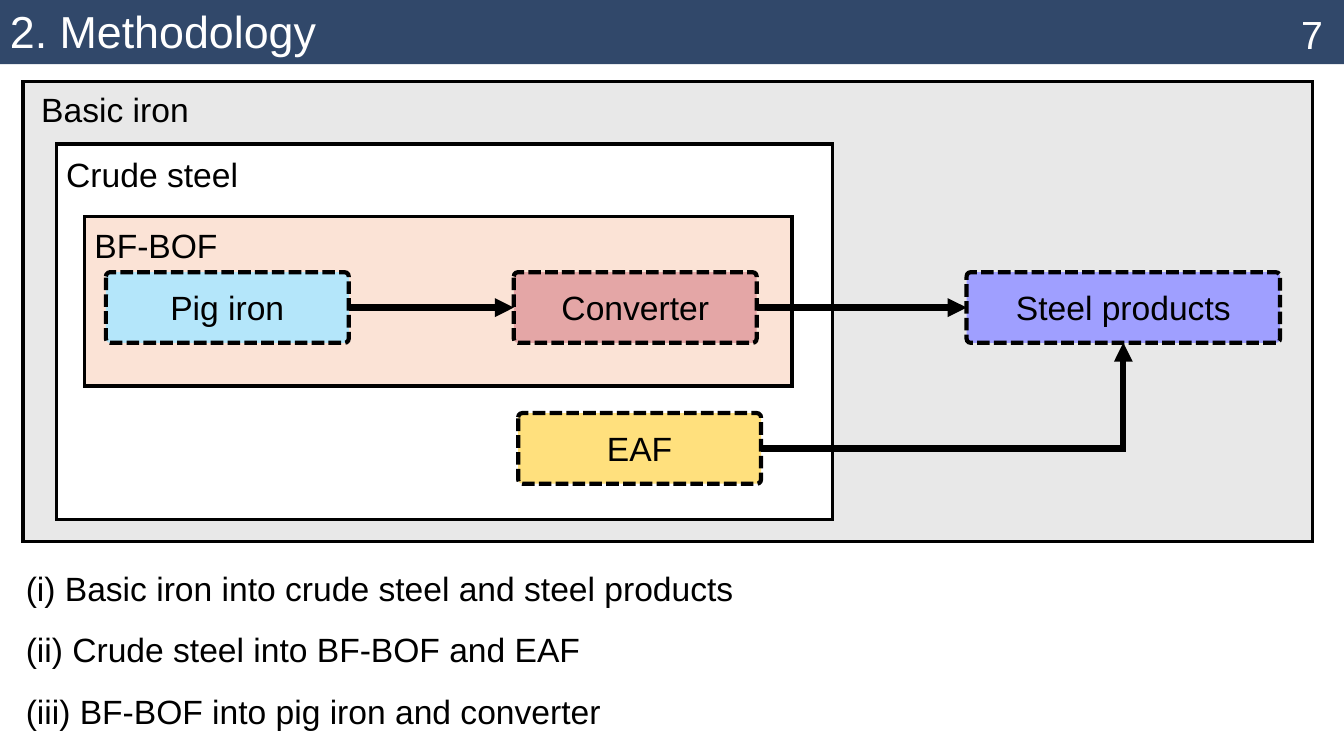
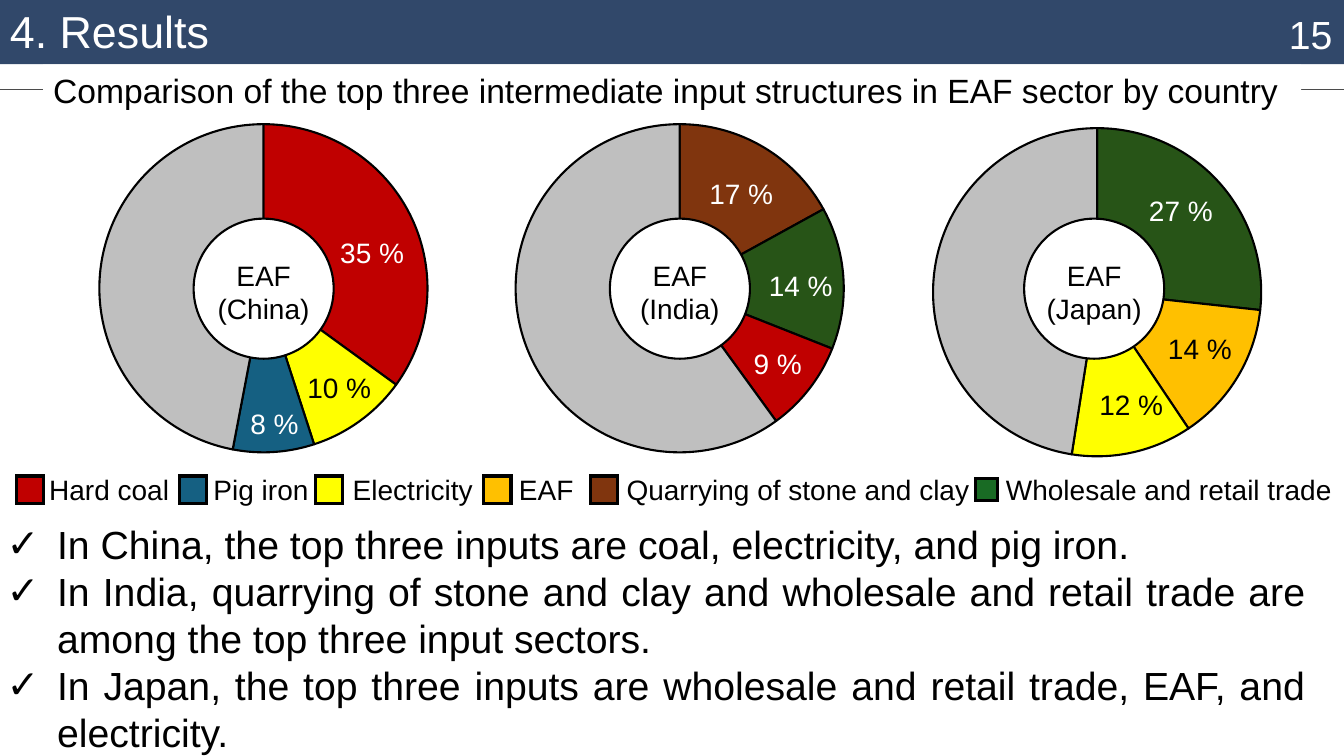
from lxml import etree
from pptx import Presentation
from pptx.chart.data import CategoryChartData
from pptx.dml.color import RGBColor
from pptx.enum.chart import XL_CHART_TYPE
from pptx.enum.dml import MSO_LINE
from pptx.enum.shapes import MSO_CONNECTOR, MSO_SHAPE
from pptx.enum.text import MSO_ANCHOR, PP_ALIGN
from pptx.oxml import parse_xml
from pptx.oxml.ns import nsdecls, qn
from pptx.util import Cm, Pt

RECT, ROUND, OVAL = MSO_SHAPE.RECTANGLE, MSO_SHAPE.ROUNDED_RECTANGLE, MSO_SHAPE.OVAL
STRAIGHT, ELBOW = MSO_CONNECTOR.STRAIGHT, MSO_CONNECTOR.ELBOW
LEFT, CENTER, JUSTIFY = PP_ALIGN.LEFT, PP_ALIGN.CENTER, PP_ALIGN.JUSTIFY
TOP, MIDDLE = MSO_ANCHOR.TOP, MSO_ANCHOR.MIDDLE
DASH = MSO_LINE.SQUARE_DOT
PIE = XL_CHART_TYPE.PIE

FONT = "Arial"
BLACK = RGBColor(0x00, 0x00, 0x00)
WHITE = RGBColor(0xFF, 0xFF, 0xFF)
NAVY = RGBColor(0x31, 0x48, 0x6A)
SLATE = RGBColor(0x4B, 0x4B, 0x4B)
PALE = RGBColor(0xE8, 0xE8, 0xE8)
PEACH = RGBColor(0xFB, 0xE3, 0xD6)
SKY = RGBColor(0xB4, 0xE6, 0xFA)
ROSE = RGBColor(0xE4, 0xA6, 0xA6)
SAND = RGBColor(0xFF, 0xE0, 0x7D)
LILAC = RGBColor(0x9F, 0x9F, 0xFF)
RED = RGBColor(0xC0, 0x00, 0x00)
BLUE = RGBColor(0x15, 0x60, 0x82)
YELLOW = RGBColor(0xFF, 0xFF, 0x00)
AMBER = RGBColor(0xFF, 0xC0, 0x00)
BROWN = RGBColor(0x80, 0x35, 0x0E)
FOREST = RGBColor(0x27, 0x54, 0x17)
GREEN = RGBColor(0x19, 0x6B, 0x24)
GRAY = RGBColor(0xBF, 0xBF, 0xBF)

WIDE, HIGH = 33.87, 19.05


def box(slide, place, fill, line=0, kind=RECT):
    """Add a filled shape; place is in cm, line is the black outline in points."""
    shape = slide.shapes.add_shape(kind, *map(Cm, place))
    shape.shadow.inherit = False
    shape.fill.solid()
    shape.fill.fore_color.rgb = fill
    if line:
        shape.line.color.rgb = BLACK
        shape.line.width = Pt(line)
        stroke = shape._element.spPr.find(qn("a:ln"))
        etree.SubElement(stroke, qn("a:miter"), lim="800000")
    else:
        shape.line.fill.background()
    return shape


def write(shape, lines, size, color=BLACK, align=LEFT, **frame):
    """Fill a shape with one paragraph per line; frame holds text frame values."""
    body = shape.text_frame
    values = {"word_wrap": False, "vertical_anchor": TOP, **frame}
    for name, value in values.items():
        setattr(body, name, value)
    body.text = lines
    for para in body.paragraphs:
        para.alignment = align
        for run in para.runs:
            look = {"name": FONT, "size": Pt(size)}
            for name, value in look.items():
                setattr(run.font, name, value)
            run.font.color.rgb = color
    return body


deck = Presentation()
deck.slide_width, deck.slide_height = Cm(WIDE), Cm(HIGH)

# Title band and page number
pages = []
for title, number, left in (("2. Methodology", "7", 32.54), ("4. Results", "15", 32.23)):
    page = deck.slides.add_slide(deck.slide_layouts[6])
    box(page, (0, 0, WIDE, 1.62), NAVY)
    for words, size, place in (
        (number, 28, (left, 0.13, 1.6, 1.45)),
        (title, 32, (0, -0.03, 27.2, 1.63)),
    ):
        write(page.shapes.add_textbox(*map(Cm, place)), words, size, WHITE)
    pages.append(page)
method, result = pages

# Methodology: nested sectors
for name, place, fill, pad in (
    ("Basic iron", (0.58, 2.06, 32.49, 11.58), PALE, (0.46, 0.18)),
    ("Crude steel", (1.42, 3.63, 19.56, 9.47), WHITE, (0.25, 0.25)),
    ("BF-BOF", (2.13, 5.46, 17.83, 4.27), PEACH, (0.25, 0.2)),
):
    write(box(method, place, fill, 2.25), name, 24,
          margin_left=Cm(pad[0]), margin_top=Cm(pad[1]))

nodes = {}
for name, left, top, width, fill in (
    ("Pig iron", 2.67, 6.86, 6.12, SKY),
    ("Converter", 12.95, 6.86, 6.12, ROSE),
    ("EAF", 13.06, 10.41, 6.12, SAND),
    ("Steel products", 24.36, 6.86, 7.9, LILAC),
):
    node = box(method, (left, top, width, 1.78), fill, 3, ROUND)
    node.adjustments[0] = 0.06
    node.line.dash_style = DASH
    write(node, name, 24, align=CENTER, vertical_anchor=MIDDLE)
    nodes[name] = node

# Connection sites of a node: 0 top, 1 left, 2 bottom, 3 right
for start, end, kind, site in (
    ("Pig iron", "Converter", STRAIGHT, 1),
    ("Converter", "Steel products", STRAIGHT, 1),
    ("EAF", "Steel products", ELBOW, 2),
):
    arrow = method.shapes.add_connector(kind, 0, 0, 0, 0)
    arrow.begin_connect(nodes[start], 3)
    arrow.end_connect(nodes[end], site)
    arrow.line.color.rgb = BLACK
    arrow.line.width = Pt(4.5)
    props = arrow._element.spPr
    if kind == ELBOW:
        props.find(qn("a:prstGeom")).set("prst", "bentConnector2")
    stroke = props.find(qn("a:ln"))
    etree.SubElement(stroke, qn("a:miter"), lim="800000")
    etree.SubElement(stroke, qn("a:tailEnd"), type="triangle")
    etree.SubElement(props, qn("a:effectLst"))

for row, words in enumerate((
    "(i) Basic iron into crude steel and steel products",
    "(ii) Crude steel into BF-BOF and EAF",
    "(iii) BF-BOF into pig iron and converter",
)):
    place = (0.4, 14.18 + 1.55 * row, 18.8, 1.27)
    write(method.shapes.add_textbox(*map(Cm, place)), words, 24)

# Results: heading on a rule
rule = result.shapes.add_connector(STRAIGHT, 0, Cm(2.26), Cm(WIDE), Cm(2.26))
rule.line.color.rgb = SLATE
rule.line.width = Pt(1)
etree.SubElement(rule._element.spPr, qn("a:effectLst"))
write(box(result, (1.09, 1.63, 31.7, 1.27), WHITE),
      "Comparison of the top three intermediate input structures in EAF sector by country",
      24, word_wrap=True)

# Each slice: value, fill, label colour, label left and top
for land, left, top, hole, rest, slices in (
    ("China", 1.14, 2.77, 4.88, 47, (
        (35, RED, WHITE, 7.92, 5.82),
        (10, YELLOW, BLACK, 7.09, 9.22),
        (8, BLUE, WHITE, 5.46, 10.11))),
    ("India", 11.63, 2.77, 15.37, 60, (
        (17, BROWN, WHITE, 17.22, 4.32),
        (14, FOREST, WHITE, 18.72, 6.63),
        (9, RED, WHITE, 18.14, 8.61))),
    ("Japan", 22.15, 2.87, 25.81, 48, (
        (27, FOREST, WHITE, 28.3, 4.75),
        (14, AMBER, BLACK, 28.78, 8.23),
        (12, YELLOW, BLACK, 27.05, 9.63))),
):
    data = CategoryChartData()
    data.categories = ["1", "2", "3", "4"]
    data.add_series("Series 1", [part[0] for part in slices] + [rest])
    place = (left, top, 11, 8.99)
    chart = result.shapes.add_chart(PIE, *map(Cm, place), data).chart
    chart.has_legend = chart.has_title = False
    chart.font.name, chart.font.size = FONT, Pt(10)
    chart.font.color.rgb = BLACK
    plot = chart.plots[0]
    plot.vary_by_categories = True
    for spot, fill in enumerate([part[1] for part in slices] + [GRAY]):
        look = plot.series[0].points[spot].format
        look.fill.solid()
        look.fill.fore_color.rgb = fill
        look.line.color.rgb = BLACK
        look.line.width = Pt(1.5)
    area = chart._chartSpace.chart.plotArea
    for old in area.findall(qn("c:layout")):
        area.remove(old)
    area.insert(0, parse_xml(
        f'<c:layout {nsdecls("c")}><c:manualLayout><c:layoutTarget val="inner"/>'
        '<c:xMode val="edge"/><c:yMode val="edge"/><c:x val="0.12"/><c:y val="0.04"/>'
        '<c:w val="0.76"/><c:h val="0.92"/></c:manualLayout></c:layout>'))

    write(box(result, (hole, 5.51, 3.53, 3.53), WHITE, 1.5, OVAL), f"EAF\n({land})", 20,
          align=CENTER, vertical_anchor=MIDDLE, margin_top=Cm(0.15), margin_bottom=0)
    for value, fill, ink, x, y in slices:
        label = result.shapes.add_textbox(Cm(x), Cm(y), Cm(2.92), Cm(1.12))
        write(label, f"{value} %", 20, ink, CENTER, word_wrap=True)

# Legend: swatch left, text left, text width, swatch side
for name, fill, left, edge, width, side in (
    ("Hard coal", RED, 0.41, 0.99, 3.5, 0.69),
    ("Pig iron", BLUE, 4.52, 5.13, 2.9, 0.69),
    ("Electricity", YELLOW, 7.95, 8.64, 3.6, 0.69),
    ("EAF", AMBER, 12.19, 12.83, 2.1, 0.69),
    ("Quarrying of stone and clay", BROWN, 14.88, 15.54, 9.2, 0.69),
    ("Wholesale and retail trade", GREEN, 24.59, 25.1, 8.77, 0.56),
):
    box(result, (left, 12.34 - side / 2, side, side), fill, 2.25)
    write(result.shapes.add_textbox(Cm(edge), Cm(11.79), Cm(width), Cm(1.12)), name, 20,
          margin_right=0)

# Findings
notes = result.shapes.add_textbox(Cm(-0.08), Cm(12.98), Cm(33.22), Cm(6.07))
body = write(notes, "\n".join((
    "In China, the top three inputs are coal, electricity, and pig iron.",
    "In India, quarrying of stone and clay and wholesale and retail trade are among "
    "the top three input sectors.",
    "In Japan, the top three inputs are wholesale and retail trade, EAF, and electricity.",
)), 28, align=JUSTIFY, word_wrap=True)
for para in body.paragraphs:
    props = para._p.get_or_add_pPr()
    props.set("marL", str(Cm(1.27)))
    props.set("indent", str(-Cm(1.27)))
    etree.SubElement(props, qn("a:buFont"), typeface=FONT)
    etree.SubElement(props, qn("a:buChar"), char="✓")

deck.save("out.pptx")
